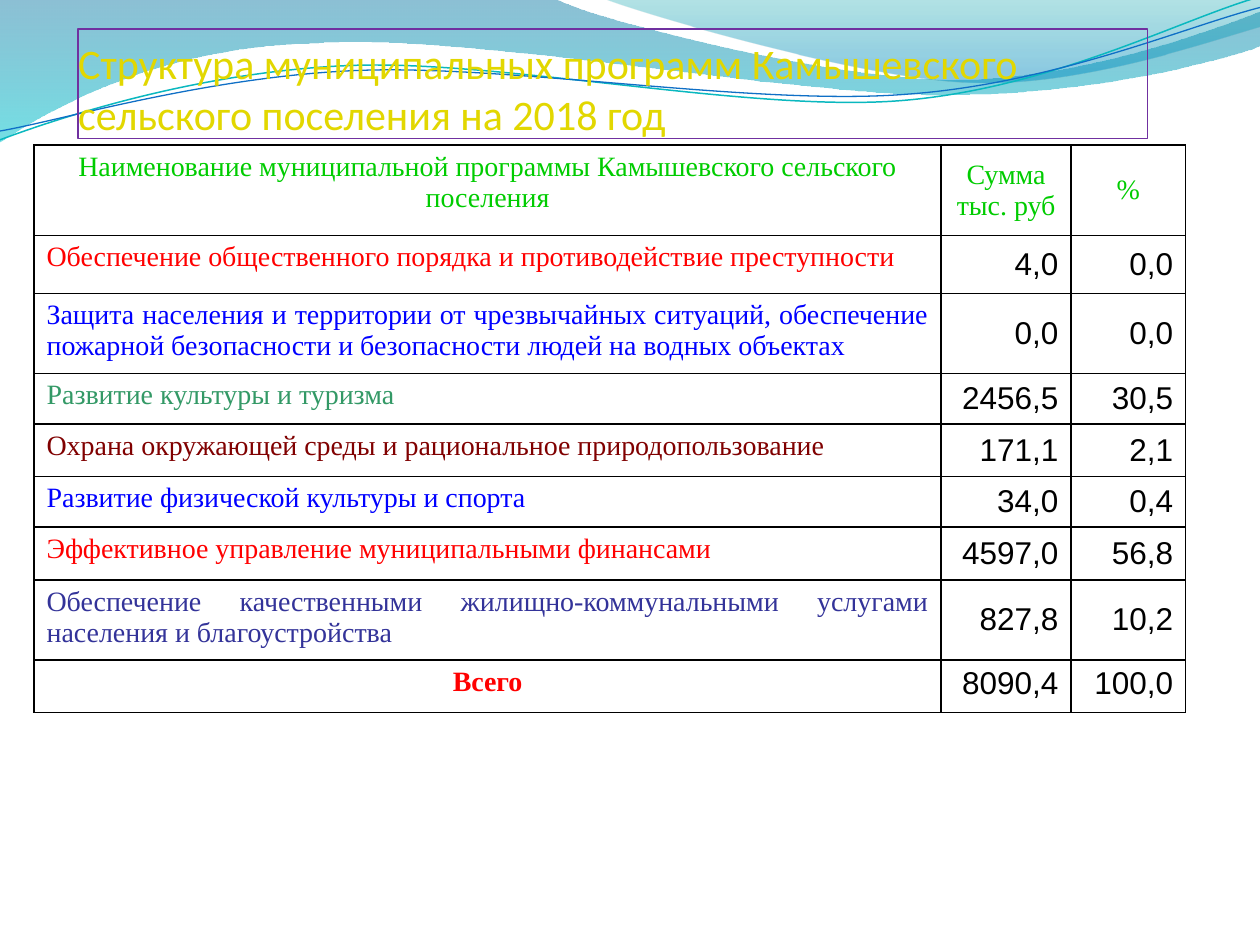
from copy import deepcopy
from dataclasses import dataclass
from math import cos, radians, sin

from lxml.etree import SubElement
from pptx import Presentation
from pptx.dml.color import RGBColor
from pptx.enum.text import MSO_ANCHOR as Anchor, PP_ALIGN as Align
from pptx.oxml import parse_xml
from pptx.oxml.ns import nsdecls, qn
from pptx.util import Emu, Pt

PX = 9144  # 100 px to the inch
COLORS = {
    "title": "E2D700", "title_border": "7030A0", "border": "000000",
    "number": "000000", "header": "00CC00", "red": "FF0000",
    "blue": "0000FF", "green": "339966", "maroon": "800000",
    "indigo": "333399", "deep_blue": "0074A1", "cyan": "00C6CF",
    "teal": "00A1A9", "sky": "008BBF", "teal_line": "0AB8BF",
    "blue_line": "0F6FC6",
}

Point = tuple[int, int]


@dataclass
class Stop:
    position: float
    color: str
    opacity: int


@dataclass
class Wave:
    """Segments of one point are straight, segments of three are Bezier curves."""
    start: Point
    segments: list[tuple[Point, ...]]
    stops: tuple[Stop, ...] = ()
    line_color: str = ""
    line_width: float = 0
    rotation: float = 0
    center: Point = (0, 0)


@dataclass
class Program:
    name: str
    color: str
    amount: str
    percent: str


@dataclass
class CellStyle:
    color: str
    align: Align
    font: str = "Times New Roman"
    size: int = 16
    bold: bool = False
    anchor: Anchor = Anchor.TOP


WAVES = [
    Wave((0, 0), [
        ((440, -1),),
        ((476, 17), (664, 63), (758, 63)),
        ((853, 63), (958, 26), (1000, 9)),
        ((1001, 36),),
        ((983, 44), (870, 76), (746, 75)),
        ((622, 75), (382, 28), (257, 34)),
        ((129, 36), (46, 83), (-1, 113)),
        ((0, 0),),
    ], stops=(Stop(0, "deep_blue", 45), Stop(1, "cyan", 55))),
    Wave((479, -1), [
        ((509, 11), (682, 62), (769, 65)),
        ((856, 69), (961, 32), (1000, 21)),
        ((1000, 0),),
        ((479, -1),),
    ], stops=(Stop(0, "teal", 30), Stop(0.8, "sky", 45))),
    Wave((0, 111), [
        ((48, 93), (158, 57), (277, 52)),
        ((395, 47), (593, 89), (713, 80)),
        ((833, 71), (938, 15), (998, -2)),
    ], line_color="teal_line", line_width=0.85, rotation=-2.7, center=(499, 57)),
    Wave((0, 104), [
        ((47, 96), (164, 61), (283, 56)),
        ((403, 51), (597, 84), (717, 75)),
        ((836, 67), (941, 21), (1000, 6)),
    ], line_color="blue_line", line_width=0.75, rotation=-2.7, center=(500, 59)),
]

TITLE = "Структура муниципальных программ Камышевского сельского поселения на 2018 год"
HEADERS = ["Наименование муниципальной программы Камышевского сельского поселения",
           "Сумма тыс. руб", "%"]
PROGRAMS = [
    Program("Обеспечение общественного порядка и противодействие преступности",
            "red", "4,0", "0,0"),
    Program("Защита населения и территории от чрезвычайных ситуаций, обеспечение "
            "пожарной безопасности и безопасности людей на водных объектах",
            "blue", "0,0", "0,0"),
    Program("Развитие культуры и туризма", "green", "2456,5", "30,5"),
    Program("Охрана окружающей среды и рациональное природопользование",
            "maroon", "171,1", "2,1"),
    Program("Развитие физической культуры и спорта", "blue", "34,0", "0,4"),
    Program("Эффективное управление муниципальными финансами",
            "red", "4597,0", "56,8"),
    Program("Обеспечение качественными жилищно-коммунальными услугами "
            "населения и благоустройства", "indigo", "827,8", "10,2"),
]
TOTAL = Program("Всего", "red", "8090,4", "100,0")
COLUMN_WIDTHS = [720, 103, 91]
ROW_HEIGHTS = [72, 46, 55, 31, 42, 20, 42, 58, 42]


def px(length: int) -> Emu:
    return Emu(length * PX)


def rgb(name: str) -> RGBColor:
    return RGBColor.from_string(COLORS[name])


def level(point: Point, wave: Wave) -> Point:
    """Undo the wave's rotation for one point and give it in EMU."""
    angle = radians(-wave.rotation)
    x, y = (value - middle for value, middle in zip(point, wave.center))
    return (round((wave.center[0] + x * cos(angle) - y * sin(angle)) * PX),
            round((wave.center[1] + x * sin(angle) + y * cos(angle)) * PX))


def bend(shape, wave: Wave) -> None:
    """Turn the lines through Bezier control points into curves."""
    lines = iter(list(shape.element.iter(qn("a:lnTo"))))
    for segment in wave.segments:
        first, *others = [next(lines) for _ in segment]
        if others:
            curve = first.makeelement(qn("a:cubicBezTo"))
            first.addprevious(curve)
            for line in (first, *others):
                curve.append(line[0])
                line.getparent().remove(line)


def draw_wave(slide, wave: Wave) -> None:
    builder = slide.shapes.build_freeform(*level(wave.start, wave), scale=1.0)
    builder.add_line_segments([level(point, wave) for segment in wave.segments
                               for point in segment], close=bool(wave.stops))
    shape = builder.convert_to_shape()
    bend(shape, wave)
    shape.rotation = wave.rotation
    shape.shadow.inherit = False
    if not wave.stops:
        shape.fill.background()
        shape.line.color.rgb = rgb(wave.line_color)
        shape.line.width = Pt(wave.line_width)
        return
    shape.line.fill.background()
    shape.fill.gradient()
    shape.fill.gradient_angle = 270
    for gradient_stop, stop in zip(shape.fill.gradient_stops, wave.stops):
        gradient_stop.position = stop.position
        gradient_stop.color.rgb = rgb(stop.color)
    for color, stop in zip(shape.element.spPr.iter(qn("a:srgbClr")), wave.stops):
        SubElement(color, qn("a:alpha")).set("val", str(stop.opacity * 1000))


def draw_title(slide) -> None:
    box = slide.shapes.add_textbox(px(62), px(23), px(849), px(87))
    box.line.color.rgb = rgb("title_border")
    box.line.width = Pt(0.75)
    frame = box.text_frame
    frame.word_wrap = True
    frame.vertical_anchor = Anchor.BOTTOM
    frame.margin_left = frame.margin_right = frame.margin_bottom = 0
    frame.margin_top = px(5)
    paragraph = frame.paragraphs[0]
    paragraph.text = TITLE
    paragraph.font.name, paragraph.font.size = "Calibri", Pt(24)
    paragraph.font.color.rgb = rgb("title")


def fill_cell(cell, text: str, style: CellStyle) -> None:
    """Write one cell; its end mark takes the text's font, as it affects row height."""
    cell.fill.background()
    cell.vertical_anchor = style.anchor
    paragraph = cell.text_frame.paragraphs[0]
    paragraph.alignment = style.align
    run = paragraph.add_run()
    run.text = text
    font = run.font
    font.name, font.size, font.bold = style.font, Pt(style.size), style.bold
    font.color.rgb = rgb(style.color)
    end_mark = deepcopy(run._r.rPr)
    end_mark.tag = qn("a:endParaRPr")
    paragraph._p.append(end_mark)
    properties = cell._tc.get_or_add_tcPr()
    for index, side in enumerate("LRTB"):
        properties.insert(index, parse_xml(
            f'<a:ln{side} {nsdecls("a")} w="{Pt(1)}"><a:solidFill>'
            f'<a:srgbClr val="{COLORS["border"]}"/></a:solidFill></a:ln{side}>'))


def draw_table(slide) -> None:
    table = slide.shapes.add_table(
        len(ROW_HEIGHTS), len(COLUMN_WIDTHS), px(27), px(115),
        px(sum(COLUMN_WIDTHS)), px(sum(ROW_HEIGHTS))).table
    table.first_row = table.horz_banding = False
    for column, width in zip(table.columns, COLUMN_WIDTHS):
        column.width = px(width)
    for row, height in zip(table.rows, ROW_HEIGHTS):
        row.height = px(height)
    for column, text in enumerate(HEADERS):
        anchor = Anchor.MIDDLE if column else Anchor.TOP
        fill_cell(table.cell(0, column), text,
                  CellStyle("header", Align.CENTER, anchor=anchor))
    for row, program in enumerate([*PROGRAMS, TOTAL], start=1):
        is_total = program is TOTAL
        fill_cell(table.cell(row, 0), program.name, CellStyle(
            program.color, Align.CENTER if is_total else Align.JUSTIFY, bold=is_total))
        number_style = CellStyle("number", Align.RIGHT, "Arial", 18,
                                 anchor=Anchor.TOP if is_total else Anchor.MIDDLE)
        for column, text in enumerate((program.amount, program.percent), start=1):
            fill_cell(table.cell(row, column), text, number_style)


def main() -> None:
    presentation = Presentation()
    presentation.slide_width, presentation.slide_height = px(1000), px(750)
    slide = presentation.slides.add_slide(presentation.slide_layouts[6])
    for wave in WAVES:
        draw_wave(slide, wave)
    draw_title(slide)
    draw_table(slide)
    presentation.save("out.pptx")


if __name__ == "__main__":
    main()
